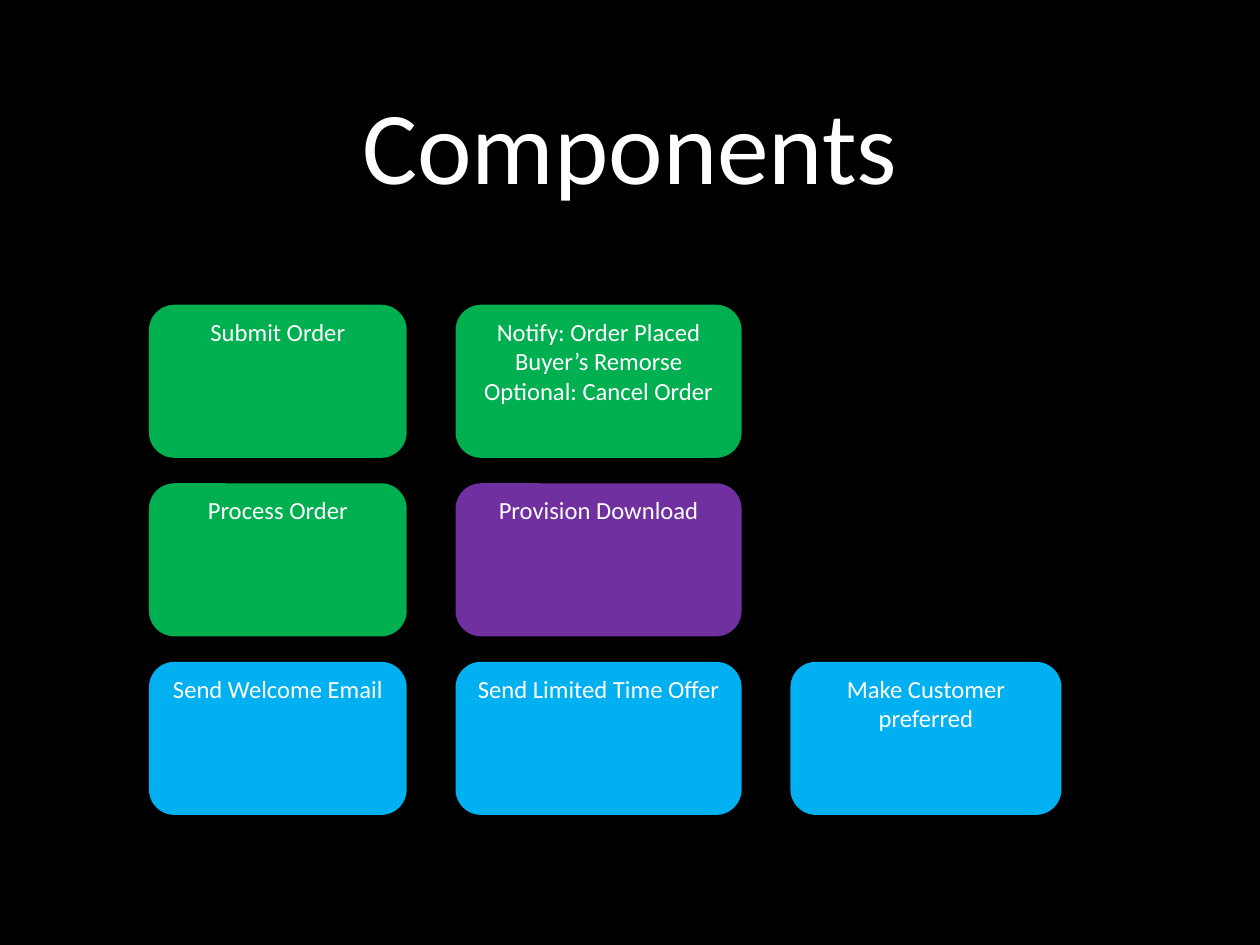
from itertools import accumulate

from pptx import Presentation
from pptx.dml.color import RGBColor
from pptx.enum.shapes import MSO_SHAPE
from pptx.enum.text import MSO_ANCHOR, MSO_AUTO_SIZE, PP_ALIGN
from pptx.util import Cm, Pt

HEADING = "Components"
GREEN, PURPLE, BLUE = "00B050", "7030A0", "00B0F0"
COMPONENT_ROWS = [
    [("Submit Order", GREEN),
     ("Notify: Order Placed\vBuyer’s Remorse\vOptional: Cancel Order", GREEN)],
    [("Process Order", GREEN), ("Provision Download", PURPLE)],
    [("Send Welcome Email", BLUE), ("Send Limited Time Offer", BLUE),
     ("Make Customer preferred", BLUE)],
]

COLUMN_WIDTHS = [7.39, 8.2, 7.77]
GRID_LEFT, GRID_TOP = 4.27, 8.74
COLUMN_GAP, ROW_GAP = 1.4, 0.73
ROW_HEIGHT = 4.39
COLUMN_LEFTS = list(accumulate([w + COLUMN_GAP for w in COLUMN_WIDTHS[:-1]],
                               initial=GRID_LEFT))

HEADING_PLACE = {"left": Cm(3.53), "top": Cm(0.71),
                 "width": Cm(29.06), "height": Cm(6.78)}
HEADING_FRAME = {"vertical_anchor": MSO_ANCHOR.MIDDLE, "word_wrap": True,
                 "auto_size": MSO_AUTO_SIZE.NONE,
                 "margin_left": Cm(0.15), "margin_right": Cm(0.15),
                 "margin_top": Cm(0.15), "margin_bottom": Cm(0.15)}
COMPONENT_FRAME = {"vertical_anchor": MSO_ANCHOR.TOP, "word_wrap": True}
HEADING_FONT = {"name": "Calibri", "size": Pt(84)}
COMPONENT_FONT = {"name": "Calibri", "size": Pt(20)}


def apply(target, values):
    for attribute, value in values.items():
        setattr(target, attribute, value)


def paint(fill, color):
    fill.solid()
    fill.fore_color.rgb = RGBColor.from_string(color)


def write(holder, text, frame_format, font_format):
    frame = holder.text_frame
    apply(frame, frame_format)
    frame.text = text
    for paragraph in frame.paragraphs:
        paragraph.alignment = PP_ALIGN.CENTER
        for run in paragraph.runs:
            apply(run.font, font_format)
            paint(run.font.fill, "FFFFFF")


def add_component(slide, row, column, text, color):
    component = slide.shapes.add_shape(
        MSO_SHAPE.ROUNDED_RECTANGLE,
        Cm(COLUMN_LEFTS[column]), Cm(GRID_TOP + row * (ROW_HEIGHT + ROW_GAP)),
        Cm(COLUMN_WIDTHS[column]), Cm(ROW_HEIGHT))
    component.shadow.inherit = False
    component.line.fill.background()
    paint(component.fill, color)
    write(component, text, COMPONENT_FRAME, COMPONENT_FONT)


def main():
    deck = Presentation()
    apply(deck, {"slide_width": Cm(36.12), "slide_height": Cm(27.1)})
    slide = deck.slides.add_slide(deck.slide_layouts.get_by_name("Title Only"))
    paint(slide.background.fill, "000000")
    heading = slide.shapes.title
    apply(heading, HEADING_PLACE)
    write(heading, HEADING, HEADING_FRAME, HEADING_FONT)
    for row, components in enumerate(COMPONENT_ROWS):
        for column, (text, color) in enumerate(components):
            add_component(slide, row, column, text, color)
    deck.save("out.pptx")


if __name__ == "__main__":
    main()
